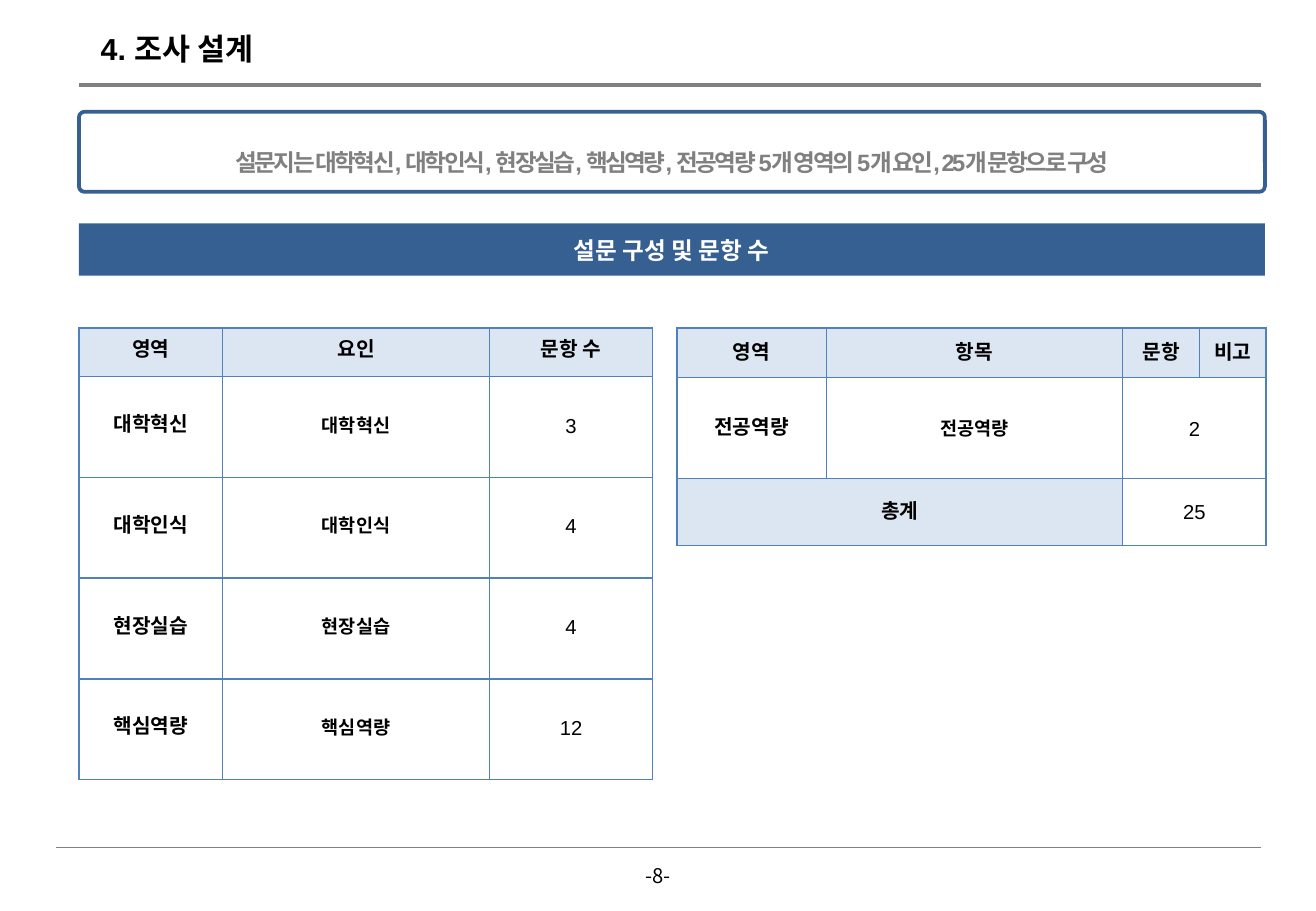
"""Build the survey design slide with its two question tables."""
from lxml.etree import SubElement
from pptx import Presentation
from pptx.dml.color import RGBColor
from pptx.enum.shapes import MSO_CONNECTOR, MSO_SHAPE
from pptx.enum.text import MSO_ANCHOR, PP_ALIGN
from pptx.oxml.ns import qn
from pptx.util import Emu, Pt

HUES = {"navy": "376092", "blue": "4F81BD", "pale": "DCE6F2",
        "gray": "808080", "black": "000000", "white": "FFFFFF"}
HANGUL = "Noto Sans CJK KR"


def px(num):
    return Emu(num * 9144)


def hue(name):
    return RGBColor.from_string(HUES[name])


def write(frame, text, size=12, bold=True, color="black", face="Arial",
          align=PP_ALIGN.CENTER, lead=None, after=None, track=None):
    para = frame.paragraphs[0]
    para.alignment = align
    para.line_spacing = lead
    para.space_after = after
    run = para.add_run()
    run.text = text
    font = run.font
    font.size, font.bold, font.name = Pt(size), bold, face
    font.color.rgb = hue(color)
    props = run._r.get_or_add_rPr()
    SubElement(props, qn("a:ea")).set("typeface", HANGUL)
    if track:
        props.set("spc", str(track))


class Page:
    def __init__(self, deck):
        self.slide = deck.slides.add_slide(deck.slide_layouts[6])
        self.shapes = self.slide.shapes

    def rule(self, left, right, top, width):
        line = self.shapes.add_connector(
            MSO_CONNECTOR.STRAIGHT, px(left), px(top), px(right), px(top))
        line.line.color.rgb = hue("gray")
        line.line.width = Pt(width)
        SubElement(line._element.spPr, qn("a:effectLst"))

    def label(self, box, text, wrap=True, **style):
        frame = self.shapes.add_textbox(*map(px, box)).text_frame
        frame.word_wrap = wrap
        write(frame, text, **style)

    def panel(self, kind, box, text, anchor, fill=None, edge=None, **style):
        shape = self.shapes.add_shape(kind, *map(px, box))
        shape.shadow.inherit = False
        if fill:
            shape.fill.solid()
            shape.fill.fore_color.rgb = hue(fill)
        else:
            shape.fill.background()
        if edge:
            shape.line.color.rgb = hue(edge)
            shape.line.width = Pt(2.25)
        else:
            shape.line.fill.background()
        shape.text_frame.word_wrap = True
        shape.text_frame.vertical_anchor = anchor
        write(shape.text_frame, text, **style)
        return shape

    def border(self, cell):
        props = cell._tc.get_or_add_tcPr()
        for spot, side in enumerate(("a:lnL", "a:lnR", "a:lnT", "a:lnB")):
            line = props.makeelement(qn(side), {"w": str(Pt(1))})
            fill = SubElement(line, qn("a:solidFill"))
            SubElement(fill, qn("a:srgbClr")).set("val", HUES["blue"])
            props.insert(spot, line)

    def table(self, left, top, cols, rows, data, lead, spans=(), heads=()):
        table = self.shapes.add_table(
            len(rows), len(cols), px(left), px(top),
            px(sum(cols)), px(sum(rows))).table
        table.horz_banding = table.first_row = False
        for col, width in zip(table.columns, cols):
            col.width = px(width)
        for row, height in zip(table.rows, rows):
            row.height = px(height)
        for y, x in spans:
            table.cell(y, x).merge(table.cell(y, x + 1))
        for y, line in enumerate(data):
            for x, text in enumerate(line):
                cell = table.cell(y, x)
                if y == 0 or (y, x) in heads:
                    cell.fill.solid()
                    cell.fill.fore_color.rgb = hue("pale")
                else:
                    cell.fill.background()
                self.border(cell)
                cell.margin_left = cell.margin_right = px(4)
                cell.margin_top = cell.margin_bottom = px(2)
                cell.vertical_anchor = MSO_ANCHOR.MIDDLE
                if text:
                    write(cell.text_frame, text, lead=Pt(lead),
                          size=11 if y and x == 1 else 12,
                          bold=not text.isdigit())


def main():
    deck = Presentation()
    deck.slide_width, deck.slide_height = px(1083), px(750)
    page = Page(deck)
    page.rule(65, 1038, 70, 2)
    page.rule(46, 1038, 698, 0.5)
    page.label((73, 20, 160, 40), "4. 조사 설계", size=18, align=PP_ALIGN.LEFT)
    page.label((514, 706, 55, 30), "-8-", wrap=False, bold=False, face=HANGUL)
    intro = page.panel(
        MSO_SHAPE.ROUNDED_RECTANGLE, (65, 92, 976, 66),
        "설문지는 대학혁신, 대학인식, 현장실습, 핵심역량, 전공역량 "
        "5개 영역의 5개 요인, 25개 문항으로 구성",
        MSO_ANCHOR.TOP, edge="navy", size=14, color="gray",
        lead=2.0, after=Pt(3), track=-150)
    intro.adjustments[0] = 0.07
    page.panel(MSO_SHAPE.RECTANGLE, (65, 184, 976, 43), "설문 구성 및 문항 수",
               MSO_ANCHOR.MIDDLE, fill="navy", size=14, color="white",
               face="Times New Roman")
    counts = {"대학혁신": "3", "대학인식": "4", "현장실습": "4", "핵심역량": "12"}
    page.table(65, 270, (118, 220, 134), (40, 83, 83, 83, 83),
               [("영역", "요인", "문항 수")]
               + [(area, area, count) for area, count in counts.items()], 12.4)
    page.table(557, 270, (123, 244, 63, 55), (41, 83, 55),
               [("영역", "항목", "문항", "비고"),
                ("전공역량", "전공역량", "2", ""),
                ("총계", "", "25", "")], 14.4,
               spans=((1, 2), (2, 0), (2, 2)), heads=((2, 0), (2, 1)))
    deck.save("out.pptx")


if __name__ == "__main__":
    main()
